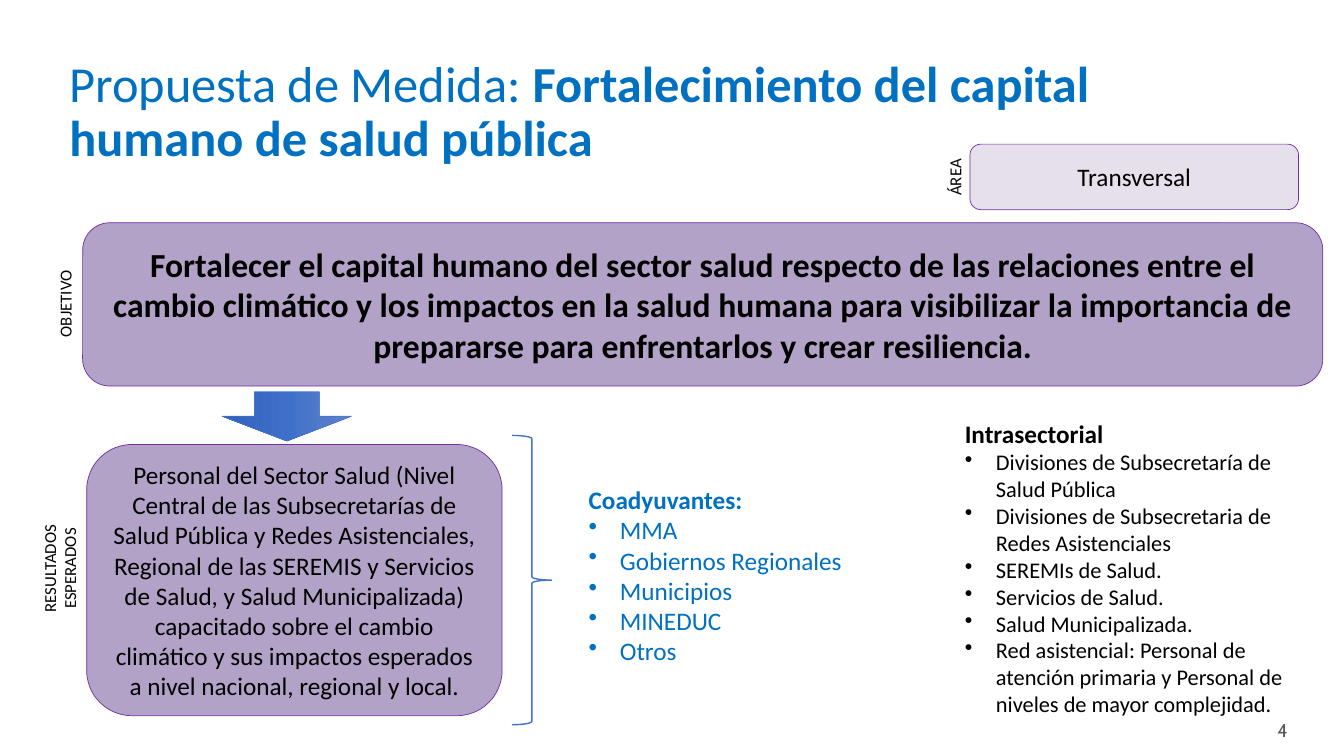
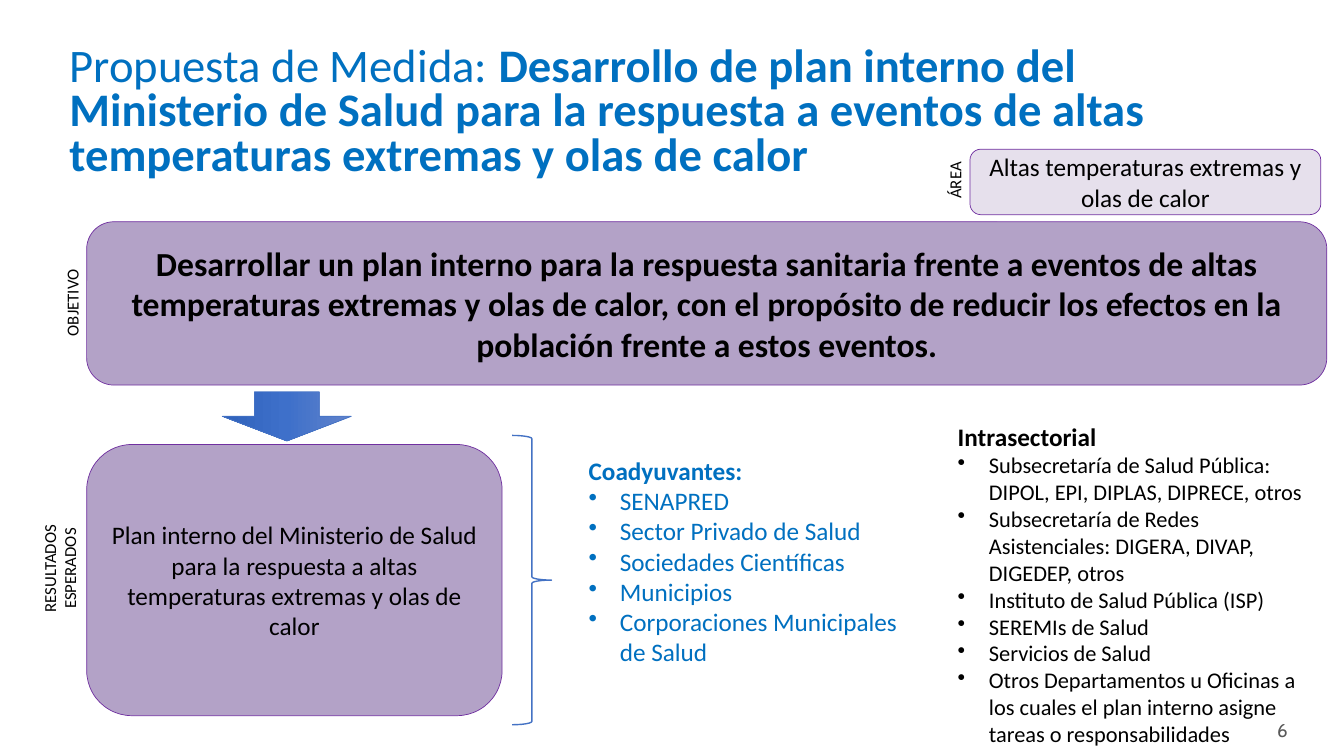
import copy

import pptx
import pptx.dml.color
import pptx.enum.shapes
import pptx.enum.text
import pptx.oxml.ns
import pptx.util
from lxml import etree
from pptx.util import Inches

SHAPE = pptx.enum.shapes.MSO_SHAPE
ALIGN = pptx.enum.text.PP_ALIGN
ANCHOR = pptx.enum.text.MSO_ANCHOR
qn = pptx.oxml.ns.qn

# Shared colours
TITLE_BLUE = "0070C0"
BLACK = "000000"
GREY = "595959"
PURPLE = "B3A2C7"
PALE_PURPLE = "E6E0EC"
PURPLE_LINE = "7030A0"
ARROW_BLUE = "4472C4"
ARROW_STOPS = ((0, "6183CB"), (0.5, "3E70CA"), (1, "3062BB"))

# What differs from slide to slide
SLIDES = [
    {
        "number": "4",
        "title": "Fortalecimiento del capital humano de salud pública",
        "title_size": 36, "title_spacing": 0.9,
        "goal": "Fortalecer el capital humano del sector salud respecto de las relaciones "
                "entre el cambio climático y los impactos en la salud humana para visibilizar "
                "la importancia de prepararse para enfrentarlos y crear resiliencia.",
        "goal_at": (0.82, 2.21), "goal_label_at": (0.21, 2.87),
        "result": "Personal del Sector Salud (Nivel Central de las Subsecretarías de Salud "
                  "Pública y Redes Asistenciales, Regional de las SEREMIS y Servicios de "
                  "Salud, y Salud Municipalizada) capacitado sobre el cambio climático y sus "
                  "impactos esperados a nivel nacional, regional y local.",
        "area": "Transversal",
        "area_top": 1.43, "area_width": 3.26, "area_label_top": 1.65,
        "helpers": ["MMA", "Gobiernos Regionales", "Municipios", "MINEDUC", "Otros"],
        "helpers_top": 4.08,
        "internal": ["Divisiones de Subsecretaría de Salud Pública",
                     "Divisiones de Subsecretaria de Redes Asistenciales",
                     "SEREMIs de Salud.", "Servicios de Salud.", "Salud Municipalizada.",
                     "Red asistencial: Personal de atención primaria y Personal de niveles "
                     "de mayor complejidad."],
        "internal_box": (9.47, 4.1, 3.69, 3.1),
    },
    {
        "number": "6",
        "title": "Desarrollo de plan interno del Ministerio de Salud para la respuesta a "
                 "eventos de altas temperaturas extremas y olas de calor",
        "title_size": 33.3, "title_spacing": 0.8,
        "goal": "Desarrollar un plan interno para la respuesta sanitaria frente a eventos de "
                "altas temperaturas extremas y olas de calor, con el propósito de reducir los "
                "efectos en la población frente a estos eventos.",
        "goal_at": (0.86, 2.2), "goal_label_at": (0.28, 2.86),
        "result": "Plan interno del Ministerio de Salud para la respuesta a altas "
                  "temperaturas extremas y olas de calor",
        "area": "Altas temperaturas extremas y olas de calor",
        "area_top": 1.48, "area_width": 3.48, "area_label_top": 1.68,
        "helpers": ["SENAPRED", "Sector Privado de Salud", "Sociedades Científicas",
                    "Municipios", "Corporaciones Municipales de Salud"],
        "helpers_top": 3.94,
        "internal": ["Subsecretaría de Salud Pública: DIPOL, EPI, DIPLAS, DIPRECE, otros",
                     "Subsecretaría de Redes Asistenciales: DIGERA, DIVAP, DIGEDEP, otros",
                     "Instituto de Salud Pública (ISP)", "SEREMIs de Salud",
                     "Servicios de Salud",
                     "Otros Departamentos u Oficinas a los cuales el plan interno asigne "
                     "tareas o responsabilidades"],
        "internal_box": (9.4, 4.13, 3.69, 3.37),
    },
]


def colour(code):
    return pptx.dml.color.RGBColor.from_string(code)


def write(box, runs, size, ink=BLACK, align=ALIGN.LEFT, font="Calibri", bullet=False):
    """Add one paragraph made of (text, bold) runs."""
    frame = box.text_frame
    para = frame.paragraphs[0]
    if para.runs:
        para = frame.add_paragraph()
    para.alignment = align
    if bullet:
        properties = para._p.get_or_add_pPr()
        properties.set("marL", str(Inches(0.31)))
        properties.set("indent", str(-Inches(0.31)))
        etree.SubElement(properties, qn("a:buChar")).set("char", "•")
    for text, bold in runs:
        span = para.add_run()
        span.text = text
        span.font.name = font
        span.font.size = pptx.util.Pt(size)
        span.font.bold = bold
        span.font.color.rgb = colour(ink)
    return para


deck = pptx.Presentation()
deck.slide_width = Inches(13.33)
deck.slide_height = Inches(7.5)

for content in SLIDES:
    page = deck.slides.add_slide(deck.slide_layouts[6])

    # Page number
    box = page.shapes.add_textbox(Inches(12.39), Inches(7.08), Inches(0.48), Inches(0.33))
    write(box, [(content["number"], False)], 13.3, GREY, ALIGN.RIGHT, "Cabin")

    # Title
    box = page.shapes.add_textbox(Inches(0.59), Inches(0.4), Inches(11.5), Inches(1.45))
    box.text_frame.word_wrap = True
    box.text_frame.vertical_anchor = ANCHOR.MIDDLE
    para = write(box, [("Propuesta de Medida: ", False), (content["title"], True)],
                 content["title_size"], TITLE_BLUE)
    para.line_spacing = content["title_spacing"]

    # Rounded panels: goal, expected result, area
    panels = [
        (*content["goal_at"], 12.3, 1.62, PURPLE, content["goal"], 24, True),
        (0.86, 4.41, 4.12, 2.69, PURPLE, content["result"], 18, False),
        (9.62, content["area_top"], content["area_width"], 0.65, PALE_PURPLE,
         content["area"], 18, False),
    ]
    for left, top, width, height, fill, text, size, bold in panels:
        panel = page.shapes.add_shape(SHAPE.ROUNDED_RECTANGLE, Inches(left), Inches(top),
                                      Inches(width), Inches(height))
        panel.shadow.inherit = False
        panel.fill.solid()
        panel.fill.fore_color.rgb = colour(fill)
        panel.line.color.rgb = colour(PURPLE_LINE)
        panel.line.width = pptx.util.Pt(0.5)
        panel.text_frame.word_wrap = True
        panel.text_frame.vertical_anchor = ANCHOR.MIDDLE
        write(panel, [(text, bold)], size, align=ALIGN.CENTER)

    # Arrow from goal to result
    arrow = page.shapes.add_shape(SHAPE.RIGHT_ARROW, Inches(2.6), Inches(3.49),
                                  Inches(0.49), Inches(1.28))
    arrow.rotation = 90
    arrow.shadow.inherit = False
    arrow.line.color.rgb = colour(ARROW_BLUE)
    arrow.line.width = pptx.util.Pt(0.5)
    arrow.fill.gradient()
    arrow.fill.gradient_angle = 270
    stop_list = arrow._element.spPr.find(qn("a:gradFill")).find(qn("a:gsLst"))
    stop_list.append(copy.deepcopy(stop_list[0]))
    for stop, (position, code) in zip(arrow.fill.gradient_stops, ARROW_STOPS):
        stop.position = position
        stop.color.rgb = colour(code)

    # Brace beside the result
    brace = page.shapes.add_shape(SHAPE.RIGHT_BRACE, Inches(5.08), Inches(4.32),
                                  Inches(0.39), Inches(2.87))
    brace.shadow.inherit = False
    brace.fill.background()
    brace.line.color.rgb = colour(ARROW_BLUE)
    brace.line.width = pptx.util.Pt(1)

    # Bulleted lists
    lists = [
        ((5.74, content["helpers_top"], 3.47, 3.25), "Coadyuvantes:", content["helpers"],
         18, TITLE_BLUE, ANCHOR.MIDDLE),
        (content["internal_box"], "Intrasectorial", content["internal"],
         16, BLACK, ANCHOR.TOP),
    ]
    for place, heading, items, size, ink, anchor in lists:
        box = page.shapes.add_textbox(*map(Inches, place))
        box.text_frame.word_wrap = True
        box.text_frame.vertical_anchor = anchor
        write(box, [(heading, True)], 18, ink)
        for item in items:
            write(box, [(item, False)], size, ink, bullet=True)

    # Sideways labels
    labels = [
        (9.15, content["area_label_top"], 0.64, 0.3, ["ÁREA"], ALIGN.RIGHT),
        (*content["goal_label_at"], 0.87, 0.3, ["OBJETIVO"], ALIGN.RIGHT),
        (0.05, 5.39, 1.08, 0.5, ["RESULTADOS", "ESPERADOS"], ALIGN.CENTER),
    ]
    for left, top, width, height, lines, align in labels:
        box = page.shapes.add_textbox(Inches(left), Inches(top), Inches(width), Inches(height))
        box.rotation = 270
        box.text_frame.word_wrap = False
        for line in lines:
            write(box, [(line, False)], 12, align=align)

deck.save("out.pptx")
